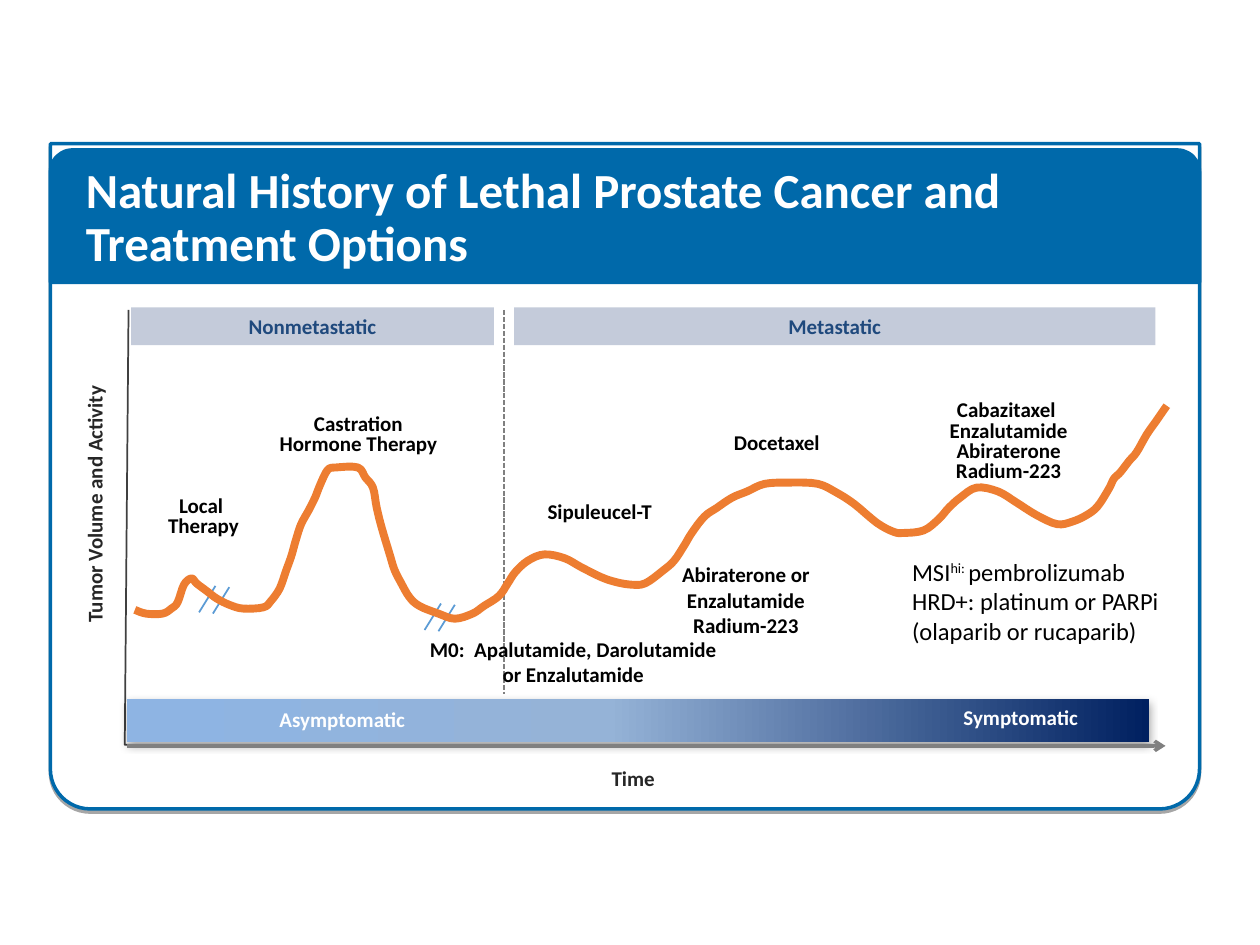
from copy import deepcopy

from lxml.etree import SubElement
from pptx import Presentation
from pptx.dml.color import RGBColor
from pptx.enum.dml import MSO_LINE
from pptx.enum.shapes import MSO_CONNECTOR, MSO_SHAPE
from pptx.enum.text import MSO_ANCHOR, PP_ALIGN
from pptx.oxml.ns import qn
from pptx.util import Inches, Pt

# Content
TITLE = "Natural History of Lethal Prostate Cancer and Treatment Options"
BLUE, ORANGE, GRAY, SLASH = "0069AA", "ED7D31", "808080", "5B9BD5"
PHASES = [("Nonmetastatic", (1.04, 2.44, 2.88, 0.3)),
          ("Metastatic", (4.08, 2.44, 5.09, 0.3))]
GRADIENT = [(0.02, "8EB4E3"), (0.47, "95B3D7"), (1, "002060")]
SYMPTOMS = [("Asymptomatic ", (1.34, 5.56, 2.79, 0.3)),
            ("Symptomatic ", (7.01, 5.54, 2.22, 0.3))]
AXIS_TITLES = [("Tumor Volume and Activity", (-0.9, 3.85, 3.3, 0.3), 270),
               ("Time", (4.55, 6.03, 0.95, 0.3), 0)]
TIGHT_LABELS = [  # close line spacing, no wrapping
    (["Local ", "Therapy"], (1.23, 3.9, 0.77, 0.42)),
    (["Castration\vHormone Therapy"], (2.11, 3.25, 1.47, 0.42)),
    (["Docetaxel"], (5.72, 3.4, 0.89, 0.26)),
    (["Cabazitaxel ", "Enzalutamide", "Abiraterone", "Radium-223"],
     (7.43, 3.14, 1.15, 0.75)),
]
WRAPPED_LABELS = [
    (["Sipuleucel-T"], (3.92, 3.91, 1.68, 0.3)),
    (["Abiraterone or", "Enzalutamide", "Radium-223"], (4.68, 4.41, 2.48, 0.71)),
    (["M0:  Apalutamide, Darolutamide or Enzalutamide"], (3.31, 5, 2.48, 0.5)),
]
BIOMARKERS = [[("MSI", 0), ("hi: ", 30), ("pembrolizumab", 0)],
              "HRD+: platinum or PARPi", "(olaparib or rucaparib)"]
BREAK_MARKS = [(1.58, 4.86), (1.69, 4.87), (3.37, 5), (3.48, 5.01)]
TUMOR_CURVE = [
    (1.07, 4.84), (1.16, 4.87), (1.29, 4.87), (1.36, 4.83), (1.41, 4.78),
    (1.46, 4.64), (1.52, 4.59), (1.56, 4.63), (1.64, 4.69), (1.72, 4.75),
    (1.82, 4.8), (1.93, 4.83), (2.09, 4.82), (2.15, 4.77), (2.22, 4.67),
    (2.27, 4.53), (2.31, 4.42), (2.35, 4.28), (2.39, 4.16), (2.45, 4.05),
    (2.5, 3.95), (2.54, 3.85), (2.6, 3.73), (2.67, 3.71), (2.84, 3.71),
    (2.9, 3.79), (2.96, 3.87), (2.99, 4.03), (3.03, 4.19), (3.09, 4.39),
    (3.13, 4.52), (3.18, 4.62), (3.25, 4.74), (3.33, 4.81), (3.48, 4.87),
    (3.61, 4.91), (3.75, 4.87), (3.84, 4.81), (3.96, 4.73), (4.03, 4.63),
    (4.09, 4.54), (4.19, 4.45), (4.32, 4.4), (4.48, 4.43), (4.61, 4.5),
    (4.77, 4.58), (4.89, 4.62), (5.01, 4.64), (5.12, 4.63), (5.26, 4.53),
    (5.35, 4.45), (5.43, 4.33), (5.49, 4.23), (5.59, 4.1), (5.69, 4.03),
    (5.81, 3.95), (5.93, 3.9), (6.07, 3.84), (6.27, 3.83), (6.49, 3.84),
    (6.64, 3.91), (6.78, 4), (6.96, 4.15), (7.09, 4.22), (7.17, 4.23),
    (7.33, 4.21), (7.45, 4.12), (7.53, 4.03), (7.62, 3.95), (7.75, 3.87),
    (7.92, 3.9), (8.07, 3.99), (8.23, 4.09), (8.39, 4.16), (8.51, 4.14),
    (8.62, 4.09), (8.71, 4.02), (8.8, 3.88), (8.84, 3.8), (8.89, 3.75),
    (8.96, 3.66), (9.02, 3.59), (9.1, 3.45), (9.17, 3.35), (9.26, 3.22),
]


def color(value):
    return RGBColor.from_string(value)


def add_text(shape, paragraphs, size=12, ink="000000", bold=True, wrap=True,
             align=PP_ALIGN.CENTER, spacing=None, anchor=MSO_ANCHOR.TOP):
    frame = shape.text_frame
    frame.word_wrap, frame.vertical_anchor = wrap, anchor
    for index, content in enumerate(paragraphs):
        para = frame.add_paragraph() if index else frame.paragraphs[0]
        para.alignment, para.line_spacing = align, spacing
        if isinstance(content, str):
            para.text = content
        else:
            for text, baseline in content:
                span = para.add_run()
                span.text = text
                if baseline:
                    span.font._element.set("baseline", str(baseline * 1000))
        for span in para.runs:
            font = span.font
            font.name, font.size, font.bold = "Calibri", Pt(size), bold
            font.color.rgb = color(ink)


def add_label(page, place, paragraphs, rotation=0, **style):
    box = page.shapes.add_textbox(*map(Inches, place))
    box.rotation = rotation
    add_text(box, paragraphs, **style)


def add_block(page, kind, place, fill=None, line=None):
    block = page.shapes.add_shape(kind, *map(Inches, place))
    block.shadow.inherit = False
    if fill:
        block.fill.solid()
        block.fill.fore_color.rgb = color(fill)
    if line:
        block.line.color.rgb, block.line.width = color(line), Pt(2)
    else:
        block.line.fill.background()
    return block


def add_shadow(shape, blur):
    effects = shape._element.spPr.find(qn("a:effectLst"))
    shadow = SubElement(effects, qn("a:outerShdw"), blurRad=str(Pt(blur)),
                        dist=str(Pt(1.8)), dir="5400000", rotWithShape="0")
    ink = SubElement(shadow, qn("a:srgbClr"), val="000000")
    SubElement(ink, qn("a:alpha"), val="35000")


def add_line(page, start, end, ink, width=1):
    line = page.shapes.add_connector(MSO_CONNECTOR.STRAIGHT,
                                     *map(Inches, start + end))
    line.line.color.rgb, line.line.width = color(ink), Pt(width)
    SubElement(line._element.spPr, qn("a:effectLst"))
    return line


def add_outline(page, points, ink, width):
    start, *rest = [(Inches(x), Inches(y)) for x, y in points]
    builder = page.shapes.build_freeform(*start)
    builder.add_line_segments(rest, close=False)
    outline = builder.convert_to_shape()
    outline.shadow.inherit = False
    outline.fill.background()
    outline.line.color.rgb, outline.line.width = color(ink), Pt(width)


def smooth(points, steps=4):
    """Catmull-Rom curve through the points."""
    padded = [points[0], *points, points[-1]]
    curve = [points[0]]
    for a, b, c, d in zip(padded, padded[1:], padded[2:], padded[3:]):
        for step in range(1, steps + 1):
            t = step / steps
            curve.append(tuple(
                (2 * q + (r - p) * t + (2 * p - 5 * q + 4 * r - s) * t ** 2
                 + (3 * q - p - 3 * r + s) * t ** 3) / 2
                for p, q, r, s in zip(a, b, c, d)))
    return curve


def main():
    deck = Presentation()
    deck.slide_width, deck.slide_height = Inches(10), Inches(7.5)
    page = deck.slides.add_slide(deck.slide_layouts[6])

    # Card and axes
    card = add_block(page, MSO_SHAPE.ROUND_2_SAME_RECTANGLE,
                     (0.4, 1.14, 9.12, 5.28), "FFFFFF", BLUE)
    card.adjustments[0], card.adjustments[1] = 0, 0.06
    add_shadow(card, 0)
    add_outline(page, [(9.17, 5.91), (0.99, 5.91), (1.02, 2.46)], "404040", 1)
    for x, y in BREAK_MARKS:
        add_line(page, (x, y), (x + 0.13, y - 0.21), SLASH)
    for text, place, rotation in AXIS_TITLES:
        add_label(page, place, [text], rotation, ink="262626")

    # Symptom bar
    bar = add_block(page, MSO_SHAPE.RECTANGLE, (1.01, 5.55, 8.11, 0.34))
    bar.fill.gradient()
    bar.fill.gradient_angle = 0
    stops = bar._element.spPr.find(qn("a:gradFill")).find(qn("a:gsLst"))
    stops.append(deepcopy(stops[-1]))
    for stop, (position, ink) in zip(bar.fill.gradient_stops, GRADIENT):
        stop.position, stop.color.rgb = position, color(ink)
    add_shadow(bar, 5)
    for text, place in SYMPTOMS:
        add_label(page, place, [text], ink="FFFFFF")

    # Phase divider and time arrow
    add_line(page, (4, 2.46), (4, 5.51), GRAY).line.dash_style = MSO_LINE.SQUARE_DOT
    arrow = add_line(page, (1.01, 5.92), (9.25, 5.92), GRAY, 2)
    SubElement(arrow.line._get_or_add_ln(), qn("a:tailEnd"), type="arrow")

    # Title band and phase headings
    band = add_block(page, MSO_SHAPE.ROUND_2_SAME_RECTANGLE,
                     (0.4, 1.19, 9.12, 1.05), BLUE, BLUE)
    band.text_frame.margin_left = Inches(0.23)
    add_text(band, [TITLE], size=28, ink="FFFFFF", align=PP_ALIGN.LEFT,
             spacing=0.9, anchor=MSO_ANCHOR.MIDDLE)
    for text, place in PHASES:
        heading = add_block(page, MSO_SHAPE.RECTANGLE, place, "C4CBDA")
        add_text(heading, [text], ink="1F497D")

    # Tumor curve and treatments
    for paragraphs, place in TIGHT_LABELS:
        add_label(page, place, paragraphs, wrap=False, spacing=0.8)
    add_outline(page, smooth(TUMOR_CURVE), ORANGE, 4.5)
    for paragraphs, place in WRAPPED_LABELS:
        add_label(page, place, paragraphs)
    add_label(page, (7.14, 4.37, 2.67, 0.81), BIOMARKERS, size=14, bold=False,
              align=PP_ALIGN.LEFT)

    deck.save("out.pptx")


if __name__ == "__main__":
    main()
